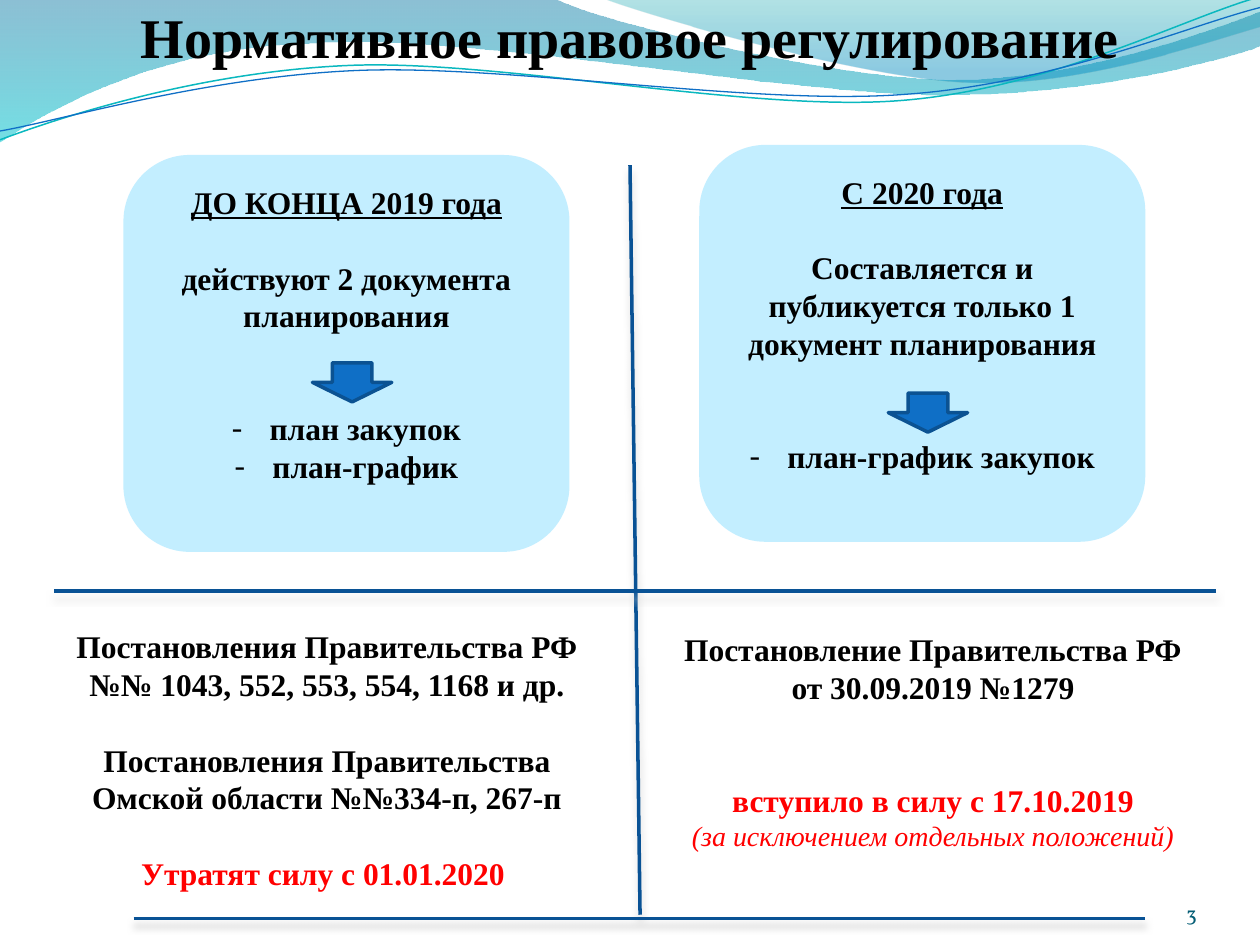
from lxml.etree import SubElement as Sub
from pptx import Presentation
from pptx.dml.color import RGBColor
from pptx.enum.shapes import MSO_CONNECTOR as Link, MSO_SHAPE as Kind
from pptx.enum.text import MSO_ANCHOR as Anchor, PP_ALIGN as Align
from pptx.oxml.ns import qn
from pptx.util import Inches, Pt

SERIF = "Times New Roman"
RED = "FF0000"
GAP = 21.5


def paint(code):
    return RGBColor.from_string(code)


def node(parent, tag, **attrs):
    return Sub(parent, qn("a:" + tag), {k: str(v) for k, v in attrs.items()})


def fade(parent, code, alpha):
    node(node(parent, "srgbClr", val=code), "alpha", val=alpha * 1000)


def write(frame, text, size=18, font=SERIF, color="000000", bold=True, italic=False,
          under=False, align=Align.CENTER, before=0, dash=False):
    para = frame.paragraphs[0]
    if para.runs:
        para = frame.add_paragraph()
    para.alignment = align
    para.space_before = Pt(before)
    run = para.add_run()
    run.text = text
    face = run.font
    face.name, face.size, face.color.rgb = font, Pt(size), paint(color)
    face.bold, face.italic, face.underline = bold, italic, under
    if dash:
        props = para._p.get_or_add_pPr()
        props.set("marL", str(Inches(0.3)))
        props.set("indent", str(-Inches(0.3)))
        node(props, "buFont", typeface=SERIF)
        node(props, "buChar", char="-")


def add_text(slide, x, y, w, h):
    frame = slide.shapes.add_textbox(*map(Inches, (x, y, w, h))).text_frame
    frame.word_wrap = True
    return frame


def add_form(slide, kind, x, y, w, h, fill):
    shape = slide.shapes.add_shape(kind, *map(Inches, (x, y, w, h)))
    shape.shadow.inherit = False
    shape.fill.solid()
    shape.fill.fore_color.rgb = paint(fill)
    shape.line.fill.background()
    return shape


def add_curve(slide, start, parts, closed):
    dots = [tuple(map(Inches, dot)) for part in parts for dot in zip(part[::2], part[1::2])]
    form = slide.shapes.build_freeform(*map(Inches, start))
    form.add_line_segments(dots, close=closed)
    shape = form.convert_to_shape()
    legs = iter(list(shape._element.iter(qn("a:lnTo"))))
    for part in parts:
        group = [next(legs) for _ in part[::2]]
        if len(group) == 3:
            bend = node(group[0].getparent(), "cubicBezTo")
            group[0].addprevious(bend)
            for leg in group:
                bend.append(leg[0])
                leg.getparent().remove(leg)
    shape.shadow.inherit = False
    shape.fill.background()
    shape.line.fill.background()
    return shape


def add_wave(slide, start, parts, stops):
    shape = add_curve(slide, start, parts, True)
    shape.fill.gradient()
    shape.fill.gradient_angle = 270
    grad = shape._element.spPr.find(qn("a:gradFill"))
    stack = grad.find(qn("a:gsLst"))
    for old in list(stack):
        stack.remove(old)
    for spot, code, alpha in stops:
        fade(node(stack, "gs", pos=spot * 1000), code, alpha)


def add_strand(slide, start, parts, code, width):
    shape = add_curve(slide, start, parts, False)
    shape.line.color.rgb = paint(code)
    shape.line.width = Pt(width)


def add_header(slide):
    add_wave(slide, (0, 0), [
        (4.4, -0.01), (4.76, 0.17, 6.64, 0.63, 7.58, 0.63),
        (8.53, 0.63, 9.58, 0.26, 10, 0.09), (10.01, 0.36),
        (9.83, 0.44, 8.7, 0.76, 7.46, 0.75), (6.22, 0.75, 3.82, 0.28, 2.57, 0.34),
        (1.29, 0.36, 0.46, 0.83, -0.01, 1.13)],
        [(0, "0074A1", 45), (100, "00C6CF", 55)])
    add_wave(slide, (4.79, -0.01), [
        (5.09, 0.11, 6.82, 0.62, 7.69, 0.65), (8.56, 0.69, 9.61, 0.32, 10, 0.21),
        (10, 0)], [(0, "00A1A9", 30), (80, "008BBF", 45)])
    add_strand(slide, (0, 1.11), [
        (0.48, 0.93, 1.58, 0.57, 2.77, 0.52), (3.95, 0.47, 5.93, 0.89, 7.13, 0.8),
        (8.33, 0.71, 9.38, 0.15, 9.98, -0.02)], "0AB8BF", 0.85)
    add_strand(slide, (0, 1.04), [
        (0.47, 0.96, 1.64, 0.61, 2.83, 0.56), (4.03, 0.51, 5.97, 0.84, 7.17, 0.75),
        (8.36, 0.67, 9.41, 0.21, 10, 0.06)], "0F6FC6", 0.75)


def add_title(slide, x, y, w, h):
    title = slide.shapes.title
    title.left, title.top, title.width, title.height = map(Inches, (x, y, w, h))
    title.text_frame.vertical_anchor = Anchor.MIDDLE
    write(title.text_frame, "Нормативное правовое регулирование", size=32)
    tree = slide.shapes._spTree
    tree.remove(title._element)
    tree.append(title._element)


def add_card(slide, x, y, drop, head, body, plans):
    w, h = 3.54, 3.15
    card = add_form(slide, Kind.ROUNDED_RECTANGLE, x, y, w, h, "8ADFFF")
    tint = card._element.spPr.find(qn("a:solidFill"))
    node(tint[0], "alpha", val=51000)
    frame = card.text_frame
    frame.word_wrap = True
    frame.vertical_anchor = Anchor.TOP
    frame.margin_top = Inches(0.07)
    write(frame, head, under=True)
    write(frame, body, before=GAP)
    for i, plan in enumerate(plans):
        write(frame, plan, dash=True, before=0 if i else 2 * GAP)
    arrow = add_form(slide, Kind.DOWN_ARROW, x + 1.5, y + drop, 0.63, 0.31, "0F6FC6")
    arrow.line.color.rgb = paint("0B5292")
    arrow.line.width = Pt(2)


def add_rule(slide, *ends):
    rule = slide.shapes.add_connector(Link.STRAIGHT, *map(Inches, ends))
    rule.line.color.rgb = paint("095295")
    rule.line.width = Pt(2)
    glow = node(node(rule._element.spPr, "effectLst"), "outerShdw",
                blurRad=Pt(4), dist=Pt(4), dir=5400000, rotWithShape=0)
    fade(glow, "D9D9D9", 100)


def add_acts(slide, x, y, lines):
    frame = add_text(slide, x, y, 4.49, 2.2)
    for text, style in lines:
        write(frame, text, **style)


def add_number(slide, x, y, w, h):
    frame = add_text(slide, x, y, w, h)
    frame.margin_left = frame.margin_right = frame.margin_top = frame.margin_bottom = 0
    frame.vertical_anchor = Anchor.BOTTOM
    write(frame, "3", size=12, font="Vollkorn", color="045D75", bold=False,
          align=Align.RIGHT)


def main():
    deck = Presentation()
    deck.slide_width, deck.slide_height = Inches(10), Inches(7.5)
    slide = deck.slides.add_slide(deck.slide_layouts[5])
    add_header(slide)
    add_number(slide, 8.67, 6.95, 0.83, 0.4)
    add_title(slide, 0.67, -0.03, 8.66, 0.64)
    add_card(slide, 0.98, 1.23, 1.65, "ДО КОНЦА 2019 года",
             "действуют 2 документа планирования", ["план закупок", "план-график"])
    add_card(slide, 5.55, 1.15, 1.97, "С 2020 года",
             "Составляется и публикуется только 1 документ планирования",
             ["план-график закупок"])
    add_rule(slide, 5, 1.31, 5.08, 7.26)
    add_rule(slide, 0.43, 4.69, 9.65, 4.69)
    add_rule(slide, 1.06, 7.29, 9.09, 7.29)
    add_acts(slide, 0.35, 4.93, [
        ("Постановления Правительства РФ", {}),
        ("№№ 1043, 552, 553, 554, 1168 и др.", {}),
        ("Постановления Правительства Омской области №№334-п, 267-п", {"before": GAP}),
        ("Утратят силу с 01.01.2020 ", {"color": RED, "before": GAP})])
    add_acts(slide, 5.16, 4.95, [
        ("Постановление Правительства РФ", {}),
        ("от 30.09.2019 №1279", {}),
        ("вступило в силу с 17.10.2019", {"color": RED, "before": 2 * GAP}),
        ("(за исключением отдельных положений)",
         {"size": 16, "color": RED, "bold": False, "italic": True})])
    deck.save("out.pptx")


if __name__ == "__main__":
    main()
